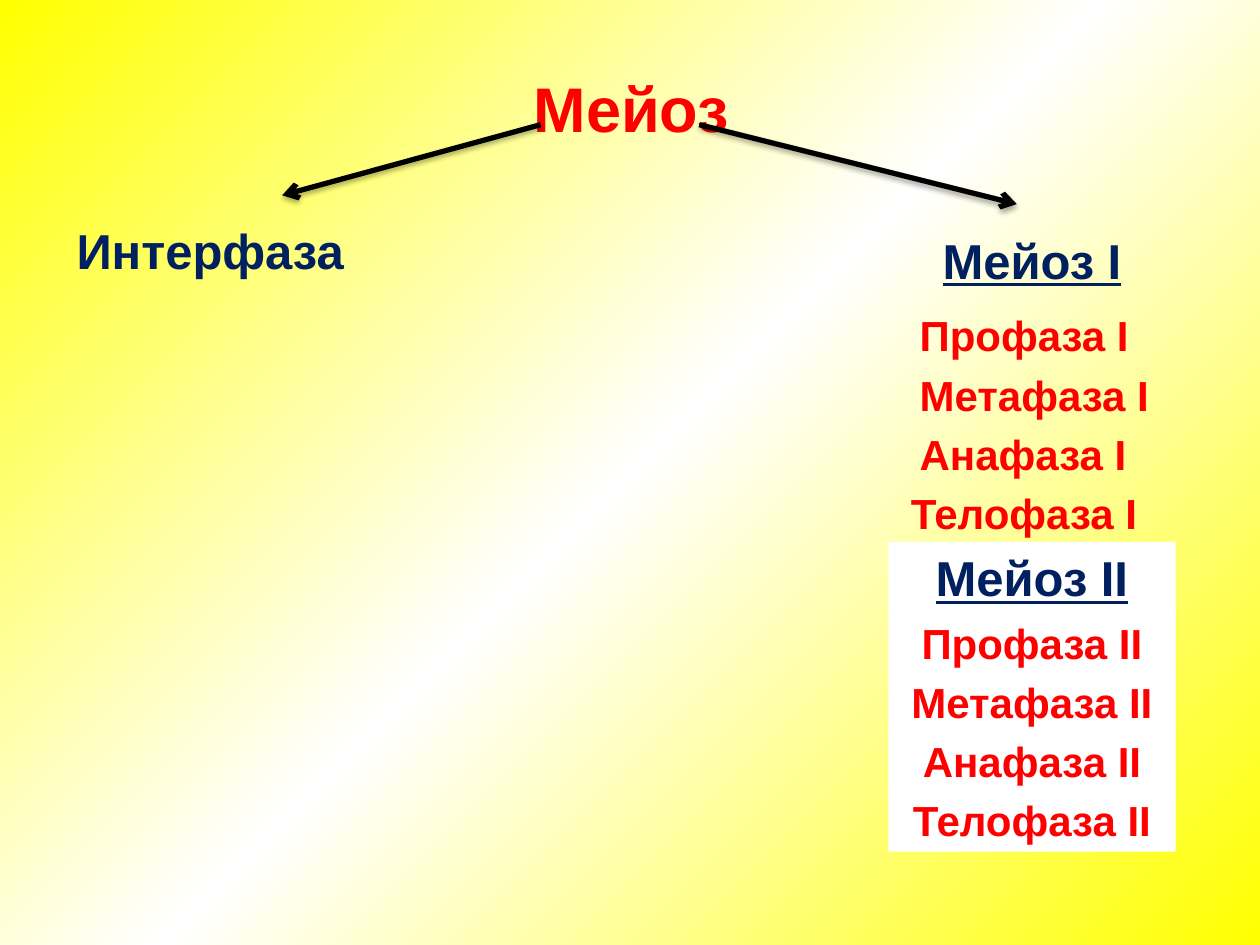
"""Build a slide outlining interphase and the phases of the two meiotic divisions."""
from copy import deepcopy

from lxml import etree
from pptx import Presentation
from pptx.dml.color import RGBColor
from pptx.enum.shapes import MSO_CONNECTOR
from pptx.enum.text import MSO_ANCHOR, MSO_AUTO_SIZE as AUTO, PP_ALIGN as ALIGN
from pptx.oxml import parse_xml
from pptx.oxml.ns import nsdecls, qn
from pptx.util import Inches, Pt

YELLOW = RGBColor(0xFF, 0xFF, 0x00)
WHITE = RGBColor(0xFF, 0xFF, 0xFF)
BLACK = RGBColor(0x00, 0x00, 0x00)
RED = RGBColor(0xFF, 0x00, 0x00)
NAVY = RGBColor(0x00, 0x20, 0x60)

HEADING = {"name": "Arial", "size": Pt(28), "bold": True}
DIVISION = {**HEADING, "underline": True}
PHASE = {**HEADING, "size": Pt(24)}
TITLE = {**HEADING, "size": Pt(36)}
SHADOW = f"""<a:effectLst {nsdecls("a")}>
  <a:outerShdw blurRad="{Pt(3.1)}" dist="{Pt(1.8)}" dir="5400000" rotWithShape="0">
    <a:srgbClr val="000000"><a:alpha val="35000"/></a:srgbClr>
  </a:outerShdw>
</a:effectLst>"""


def write(frame, text, style, color, align):
    para = frame.paragraphs[0]
    para.alignment = align
    span = para.add_run()
    span.text = text
    for name, value in style.items():
        setattr(span.font, name, value)
    span.font.color.rgb = color


def add_label(text, left, top, width, height, style, color, align=ALIGN.LEFT, fill=None):
    box = page.shapes.add_textbox(Inches(left), Inches(top), Inches(width), Inches(height))
    if fill is not None:
        box.fill.solid()
        box.fill.fore_color.rgb = fill
    box.text_frame.word_wrap = True
    box.text_frame.auto_size = AUTO.SHAPE_TO_FIT_TEXT
    write(box.text_frame, text, style, color, align)


deck = Presentation()
deck.slide_width, deck.slide_height = Inches(10), Inches(7.5)
page = deck.slides.add_slide(deck.slide_layouts[5])

backdrop = page.background.fill
backdrop.gradient()
backdrop.gradient_angle = 315
for stop in backdrop.gradient_stops:
    stop.color.rgb = YELLOW
stop_list = page.element.find(".//" + qn("a:gsLst"))
stop_list.insert(1, deepcopy(stop_list[0]))
for stop, position, color in zip(backdrop.gradient_stops, (0, 0.5, 1), (YELLOW, WHITE, YELLOW)):
    stop.position = position
    stop.color.rgb = color

title = page.shapes.title
title.left, title.top = Inches(0.51), Inches(0.44)
title.width, title.height = Inches(9), Inches(4.95)
title.text_frame.vertical_anchor = MSO_ANCHOR.TOP
title.text_frame.auto_size = AUTO.NONE
title.text_frame.margin_top = Inches(0.11)
write(title.text_frame, "Мейоз", TITLE, RED, ALIGN.CENTER)

for start_x, end_x, end_y in ((4.29, 2.24, 1.55), (5.55, 8.07, 1.62)):
    arrow = page.shapes.add_connector(
        MSO_CONNECTOR.STRAIGHT, Inches(start_x), Inches(0.99), Inches(end_x), Inches(end_y)
    )
    arrow.line.width = Pt(3)
    arrow.line.color.rgb = BLACK
    etree.SubElement(arrow.line._get_or_add_ln(), qn("a:tailEnd"), type="arrow")
    arrow.element.spPr.append(parse_xml(SHADOW))

add_label("Интерфаза", 0.51, 1.7, 3.07, 0.57, HEADING, NAVY)

phases = ("Профаза", "Метафаза", "Анафаза", "Телофаза")
divisions = (
    ("I", 1.78, 2.41, (7.2, 7.2, 7.2, 7.13), ALIGN.LEFT, None),
    ("II", 4.3, 4.85, (7.05,) * 4, ALIGN.CENTER, WHITE),
)
for numeral, heading_top, phase_top, lefts, align, fill in divisions:
    add_label(f"Мейоз {numeral}", 7.05, heading_top, 2.28, 0.57, DIVISION, NAVY, ALIGN.CENTER, fill)
    for row, (phase, left) in enumerate(zip(phases, lefts)):
        top = phase_top + row * 0.47
        add_label(f"{phase} {numeral}", left, top, 2.28, 0.5, PHASE, RED, align, fill)

deck.save("out.pptx")
